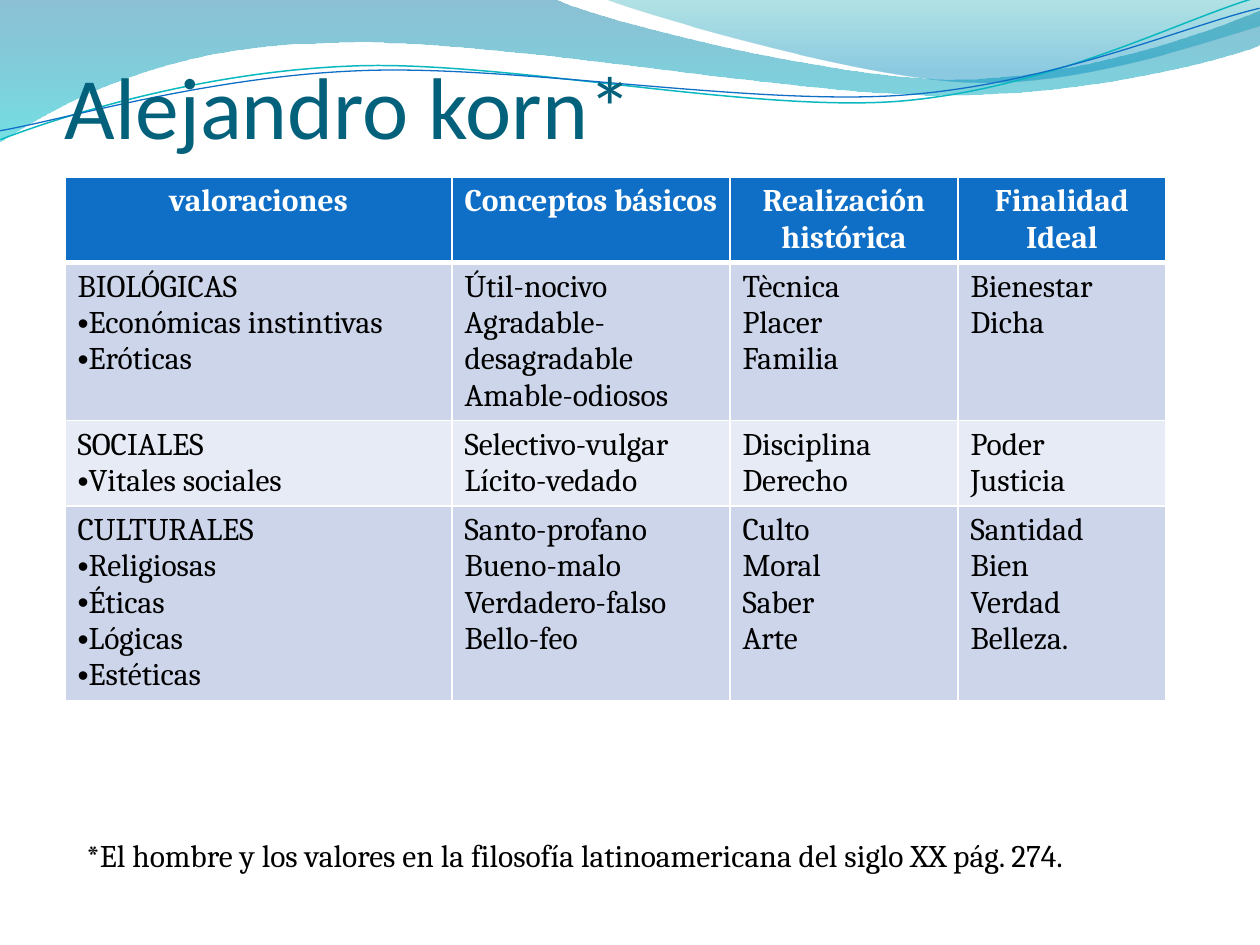
from dataclasses import dataclass

from lxml.etree import SubElement
from pptx import Presentation
from pptx.dml.color import RGBColor
from pptx.enum.text import MSO_ANCHOR as Anchor, MSO_AUTO_SIZE as AutoSize, PP_ALIGN as Align
from pptx.oxml.ns import qn
from pptx.util import Pt

EMU_PER_PX = 914400 / 126
BULLET = "•"

WHITE = RGBColor(0xFF, 0xFF, 0xFF)
BLACK = RGBColor(0x00, 0x00, 0x00)
TITLE_TEAL = RGBColor(0x04, 0x61, 0x7B)
HEADER_BLUE = RGBColor(0x0F, 0x6F, 0xC6)
BAND_DARK = RGBColor(0xCC, 0xD5, 0xEA)
BAND_LIGHT = RGBColor(0xE7, 0xEB, 0xF5)
LINE_TEAL = RGBColor(0x0A, 0xB8, 0xBF)
DEEP_BLUE = RGBColor(0x00, 0x74, 0xA1)
CYAN = RGBColor(0x00, 0xC6, 0xCF)
SEA_GREEN = RGBColor(0x00, 0xA1, 0xA9)
SKY_BLUE = RGBColor(0x00, 0x8B, 0xBF)


@dataclass(frozen=True)
class Stop:
    position: float
    color: RGBColor
    opacity: int


@dataclass(frozen=True)
class Wave:
    start: tuple[int, int]
    segments: list[tuple[int, ...]]
    stops: tuple[Stop, ...] = ()
    line_color: RGBColor | None = None
    line_width: float = 0
    rotation: float = 0


WAVES = [
    Wave(
        (0, 0),
        [(554, -1), (600, 21, 837, 79, 955, 79), (1075, 79, 1207, 33, 1260, 11),
         (1261, 45), (1239, 55, 1096, 96, 940, 95), (784, 95, 481, 35, 324, 43),
         (163, 45, 58, 105, -1, 142)],
        stops=(Stop(0, DEEP_BLUE, 45), Stop(1, CYAN, 55)),
    ),
    Wave(
        (604, -1),
        [(641, 14, 859, 78, 969, 82), (1079, 87, 1211, 40, 1260, 26), (1260, 0)],
        stops=(Stop(0, SEA_GREEN, 30), Stop(0.8, SKY_BLUE, 45)),
    ),
    Wave(
        (-2, 110),
        [(58, 90, 199, 52, 350, 53), (499, 53, 745, 118, 896, 114),
         (1049, 109, 1184, 45, 1260, 27)],
        line_color=LINE_TEAL, line_width=0.85, rotation=357.3,
    ),
    Wave(
        (-2, 101),
        [(57, 94, 207, 57, 357, 58), (509, 58, 750, 112, 902, 108),
         (1052, 104, 1187, 52, 1262, 38)],
        line_color=HEADER_BLUE, line_width=0.75, rotation=357.3,
    ),
]

COLUMN_WIDTHS = [387, 278, 228, 208]
ROW_HEIGHT = 52
TABLE_HEIGHT = 542
ROW_FILLS = [HEADER_BLUE, BAND_DARK, BAND_LIGHT, BAND_DARK]
VALUES = [
    ["valoraciones", "Conceptos básicos", "Realización histórica", "Finalidad Ideal"],
    ["BIOLÓGICAS\n•Económicas instintivas\n•Eróticas",
     "Útil-nocivo\nAgradable-desagradable\nAmable-odiosos",
     "Tècnica\nPlacer\nFamilia", "Bienestar\nDicha"],
    ["SOCIALES\n•Vitales sociales", "Selectivo-vulgar\nLícito-vedado",
     "Disciplina\nDerecho", "Poder\nJusticia"],
    ["CULTURALES\n•Religiosas\n•Éticas\n•Lógicas\n•Estéticas",
     "Santo-profano\nBueno-malo\nVerdadero-falso\nBello-feo",
     "Culto\nMoral\nSaber\nArte", "Santidad\nBien\nVerdad\nBelleza."],
]


def px(length: float) -> int:
    return round(length * EMU_PER_PX)


def write_text(frame, text: str, *, size: int = 18, font: str = "Cambria",
               color: RGBColor = BLACK, bold: bool = False, align=Align.LEFT) -> None:
    for index, line in enumerate(text.split("\n")):
        paragraph = frame.add_paragraph() if index else frame.paragraphs[0]
        paragraph.alignment = align
        if line.startswith(BULLET):
            properties = paragraph._p.get_or_add_pPr()
            properties.set("marL", "0")
            properties.set("indent", "0")
            SubElement(properties, qn("a:buFont"), typeface="Arial")
            SubElement(properties, qn("a:buChar"), char=BULLET)
        run = paragraph.add_run()
        run.text = line.removeprefix(BULLET)
        run.font.size = Pt(size)
        run.font.name = font
        run.font.bold = bold
        run.font.color.rgb = color


def bend_segments(ribbon, wave: Wave) -> None:
    steps = iter(list(ribbon.element.spPr.iter(qn("a:lnTo"))))
    for segment in wave.segments:
        first = next(steps)
        if len(segment) == 6:
            curve = first.makeelement(qn("a:cubicBezTo"))
            first.addprevious(curve)
            for step in (first, next(steps), next(steps)):
                curve.append(step[0])
                step.getparent().remove(step)


def draw_wave(slide, wave: Wave) -> None:
    builder = slide.shapes.build_freeform(px(wave.start[0]), px(wave.start[1]))
    builder.add_line_segments(
        [(px(x), px(y)) for segment in wave.segments
         for x, y in zip(segment[::2], segment[1::2])],
        close=bool(wave.stops))
    ribbon = builder.convert_to_shape()
    bend_segments(ribbon, wave)
    ribbon.rotation = wave.rotation
    ribbon.shadow.inherit = False
    if wave.stops:
        ribbon.fill.gradient()
        ribbon.fill.gradient_angle = 270
        for target, stop in zip(ribbon.fill.gradient_stops, wave.stops):
            target.position = stop.position
            target.color.rgb = stop.color
        for tint, stop in zip(ribbon.element.spPr.iter(qn("a:srgbClr")), wave.stops):
            SubElement(tint, qn("a:alpha"), val=str(stop.opacity * 1000))
        ribbon.line.fill.background()
    else:
        ribbon.fill.background()
        ribbon.line.color.rgb = wave.line_color
        ribbon.line.width = Pt(wave.line_width)


def draw_header_borders(cell) -> None:
    properties = cell._tc.get_or_add_tcPr()
    for side, width in {"L": 1, "R": 1, "T": 1, "B": 3}.items():
        border = SubElement(properties, qn(f"a:ln{side}"), w=str(Pt(width)))
        SubElement(SubElement(border, qn("a:solidFill")), qn("a:srgbClr"), val=str(WHITE))


def draw_values_table(slide) -> None:
    holder = slide.shapes.add_table(
        len(VALUES), len(COLUMN_WIDTHS), px(65), px(177),
        px(sum(COLUMN_WIDTHS)), px(TABLE_HEIGHT))
    table = holder.table
    for column, width in zip(table.columns, COLUMN_WIDTHS):
        column.width = px(width)
    for index, row in enumerate(table.rows):
        row.height = px(ROW_HEIGHT)
        header = index == 0
        for cell, text in zip(row.cells, VALUES[index]):
            if header:
                draw_header_borders(cell)
            cell.fill.solid()
            cell.fill.fore_color.rgb = ROW_FILLS[index]
            write_text(cell.text_frame, text, bold=header,
                       color=WHITE if header else BLACK,
                       align=Align.CENTER if header else Align.LEFT)
    holder.height = px(TABLE_HEIGHT)


def place_title(slide) -> None:
    title = slide.shapes.title
    title.left, title.top, title.width, title.height = px(65), px(0), px(1134), px(157)
    frame = title.text_frame
    frame.auto_size = AutoSize.NONE
    frame.vertical_anchor = Anchor.BOTTOM
    frame.margin_left = frame.margin_right = frame.margin_bottom = 0
    write_text(frame, "Alejandro korn*", size=50, font="Calibri", color=TITLE_TEAL)
    title.element.getparent().append(title.element)


def place_footnote(slide) -> None:
    footnote = slide.shapes.add_textbox(px(74), px(830), px(1101), px(50)).text_frame
    footnote.word_wrap = True
    footnote.auto_size = AutoSize.SHAPE_TO_FIT_TEXT
    write_text(footnote, "*El hombre y los valores en la filosofía latinoamericana "
                         "del siglo XX pág. 274.")


def main() -> None:
    deck = Presentation()
    deck.slide_width, deck.slide_height = px(1260), px(945)
    slide = deck.slides.add_slide(deck.slide_layouts[5])
    for wave in WAVES:
        draw_wave(slide, wave)
    place_title(slide)
    draw_values_table(slide)
    place_footnote(slide)
    deck.save("out.pptx")


if __name__ == "__main__":
    main()
